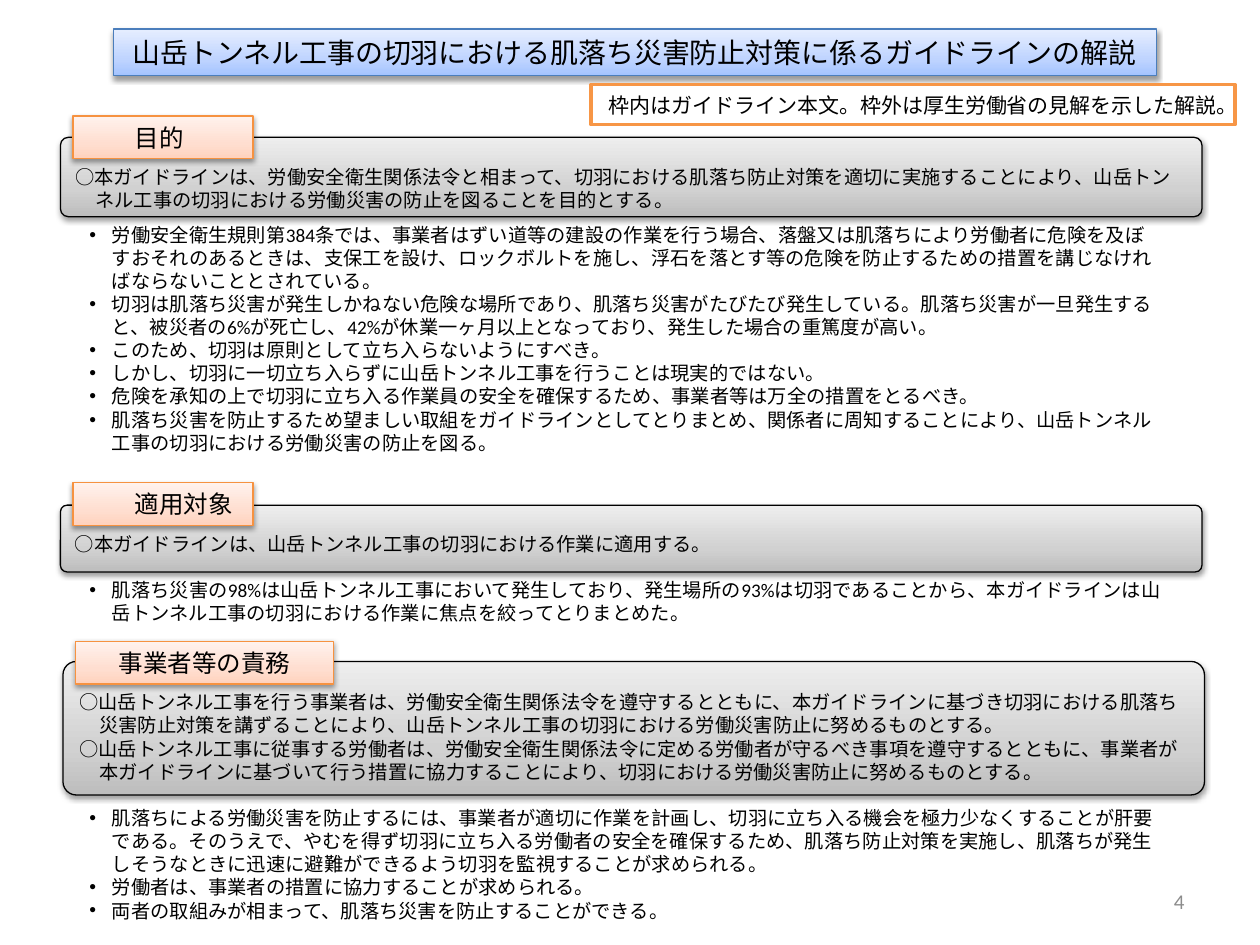
from dataclasses import dataclass
from typing import Optional

from lxml.etree import SubElement
from pptx import Presentation
from pptx.dml.color import RGBColor
from pptx.enum.shapes import MSO_SHAPE
from pptx.enum.text import MSO_ANCHOR, PP_ALIGN
from pptx.oxml.ns import qn
from pptx.util import Inches, Pt

COLORS = {
    "text": "000000",
    "number": "8C8C8C",
    "white": "FFFFFF",
    "orange": "F79646",
    "orange_edge": "F69240",
    "blue_edge": "4B7EBC",
}
GRADIENTS = {
    "gray": ("BDBDBD", "D1D1D1", "EEEEEE"),
    "peach": ("FFD2BD", "FFDED0", "FFF2ED"),
    "blue": ("A4C4FF", "BFD4FF", "E6EEFF"),
}
STOP_POSITIONS = (0, 35, 100)


@dataclass(frozen=True)
class Box:
    left: float
    top: float
    width: float
    height: float

    def lengths(self):
        return [Inches(value) for value in (self.left, self.top, self.width, self.height)]


@dataclass(frozen=True)
class Section:
    heading: str
    heading_box: Box
    rule_box: Box
    rules: tuple[str, ...]
    bullet_box: Box
    bullets: tuple[str, ...]
    centered: bool = False


SECTIONS = (
    Section(
        "目的",
        Box(0.58, 0.92, 1.43, 0.34),
        Box(0.48, 1.09, 9.06, 0.63),
        ("○本ガイドラインは、労働安全衛生関係法令と相まって、切羽における肌落ち防止対策を適切に実施することにより、山岳トンネル工事の切羽における労働災害の防止を図ることを目的とする。",),
        Box(0.59, 1.72, 8.75, 1.95),
        (
            "労働安全衛生規則第384条では、事業者はずい道等の建設の作業を行う場合、落盤又は肌落ちにより労働者に危険を及ぼすおそれのあるときは、支保工を設け、ロックボルトを施し、浮石を落とす等の危険を防止するための措置を講じなければならないこととされている。",
            "切羽は肌落ち災害が発生しかねない危険な場所であり、肌落ち災害がたびたび発生している。肌落ち災害が一旦発生すると、被災者の6%が死亡し、42%が休業一ヶ月以上となっており、発生した場合の重篤度が高い。",
            "このため、切羽は原則として立ち入らないようにすべき。",
            "しかし、切羽に一切立ち入らずに山岳トンネル工事を行うことは現実的ではない。",
            "危険を承知の上で切羽に立ち入る作業員の安全を確保するため、事業者等は万全の措置をとるべき。",
            "肌落ち災害を防止するため望ましい取組をガイドラインとしてとりまとめ、関係者に周知することにより、山岳トンネル工事の切羽における労働災害の防止を図る。",
        ),
    ),
    Section(
        "適用対象",
        Box(0.58, 3.83, 1.43, 0.34),
        Box(0.48, 4.01, 9.06, 0.53),
        ("○本ガイドラインは、山岳トンネル工事の切羽における作業に適用する。",),
        Box(0.59, 4.54, 8.75, 0.66),
        ("肌落ち災害の98%は山岳トンネル工事において発生しており、発生場所の93%は切羽であることから、本ガイドラインは山岳トンネル工事の切羽における作業に焦点を絞ってとりまとめた。",),
    ),
    Section(
        "事業者等の責務",
        Box(0.6, 5.09, 2.05, 0.34),
        Box(0.5, 5.25, 9.06, 1.06),
        (
            "○山岳トンネル工事を行う事業者は、労働安全衛生関係法令を遵守するとともに、本ガイドラインに基づき切羽における肌落ち災害防止対策を講ずることにより、山岳トンネル工事の切羽における労働災害防止に努めるものとする。",
            "○山岳トンネル工事に従事する労働者は、労働安全衛生関係法令に定める労働者が守るべき事項を遵守するとともに、事業者が本ガイドラインに基づいて行う措置に協力することにより、切羽における労働災害防止に努めるものとする。",
        ),
        Box(0.59, 6.35, 8.75, 1.21),
        (
            "肌落ちによる労働災害を防止するには、事業者が適切に作業を計画し、切羽に立ち入る機会を極力少なくすることが肝要である。そのうえで、やむを得ず切羽に立ち入る労働者の安全を確保するため、肌落ち防止対策を実施し、肌落ちが発生しそうなときに迅速に避難ができるよう切羽を監視することが求められる。",
            "労働者は、事業者の措置に協力することが求められる。",
            "両者の取組みが相まって、肌落ち災害を防止することができる。",
        ),
        centered=True,
    ),
)


def write_text(shape, *lines: str, size: float = 11, color: str = "text",
               align=PP_ALIGN.LEFT, anchor=MSO_ANCHOR.TOP, inset_left: float = 0.1,
               inset_top: float = 0.05, margin: float = 0, indent: float = 0,
               bullet: Optional[str] = None) -> None:
    frame = shape.text_frame
    frame.word_wrap = True
    frame.vertical_anchor = anchor
    frame.margin_left, frame.margin_top = Inches(inset_left), Inches(inset_top)
    frame.text = "\n".join(lines)
    for paragraph in frame.paragraphs:
        paragraph.alignment = align
        properties = paragraph._p.get_or_add_pPr()
        properties.set("marL", str(Inches(margin)))
        properties.set("indent", str(Inches(indent)))
        if bullet:
            SubElement(properties, qn("a:buFont"), typeface="Arial")
            SubElement(properties, qn("a:buChar"), char=bullet)
        for run in paragraph.runs:
            run.font.name = "Calibri"
            run.font.size = Pt(size)
            run.font.color.rgb = RGBColor.from_string(COLORS[color])


def add_panel(slide, box: Box, line: str, gradient: Optional[str] = None,
              kind=MSO_SHAPE.RECTANGLE, line_width: float = 0.75):
    shape = slide.shapes.add_shape(kind, *box.lengths())
    shape.line.color.rgb = RGBColor.from_string(COLORS[line])
    shape.line.width = Pt(line_width)
    shape.shadow.inherit = False
    if gradient:
        apply_gradient(shape, GRADIENTS[gradient])
        apply_shadow(shape)
    else:
        shape.fill.solid()
        shape.fill.fore_color.rgb = RGBColor.from_string(COLORS["white"])
    return shape


def apply_gradient(shape, colors: tuple[str, ...]) -> None:
    shape.fill.gradient()
    gradient = shape._element.spPr.find(qn("a:gradFill"))
    for child in list(gradient):
        gradient.remove(child)
    stops = SubElement(gradient, qn("a:gsLst"))
    for position, color in zip(STOP_POSITIONS, colors):
        stop = SubElement(stops, qn("a:gs"), pos=str(position * 1000))
        SubElement(stop, qn("a:srgbClr"), val=color)
    SubElement(gradient, qn("a:lin"), ang=str(270 * 60000), scaled="0")


def apply_shadow(shape) -> None:
    effects = shape._element.spPr.find(qn("a:effectLst"))
    shadow = SubElement(effects, qn("a:outerShdw"), blurRad=str(Pt(3.1)),
                        dist=str(Pt(1.6)), dir=str(90 * 60000), rotWithShape="0")
    color = SubElement(shadow, qn("a:srgbClr"), val=COLORS["text"])
    SubElement(color, qn("a:alpha"), val="38000")


def add_section(slide, section: Section) -> None:
    explanation = slide.shapes.add_textbox(*section.bullet_box.lengths())
    write_text(explanation, *section.bullets, margin=0.2, indent=-0.18, bullet="•")

    rule = add_panel(slide, section.rule_box, "text", "gray", MSO_SHAPE.ROUNDED_RECTANGLE)
    rule.adjustments[0] = 0.1
    write_text(rule, *section.rules, inset_top=0.2, margin=0.16, indent=-0.2)

    heading = add_panel(slide, section.heading_box, "orange_edge", "peach")
    write_text(heading, section.heading, size=14, anchor=MSO_ANCHOR.MIDDLE,
               align=PP_ALIGN.CENTER if section.centered else PP_ALIGN.LEFT,
               inset_left=0.1 if section.centered else 0.49)


def main() -> None:
    presentation = Presentation()
    presentation.slide_width, presentation.slide_height = Inches(10), Inches(7.5)
    slide = presentation.slides.add_slide(presentation.slide_layouts[6])

    title = add_panel(slide, Box(0.9, 0.23, 8.28, 0.37), "blue_edge", "blue")
    write_text(title, "山岳トンネル工事の切羽における肌落ち災害防止対策に係るガイドラインの解説",
               size=16, align=PP_ALIGN.CENTER)

    for section in SECTIONS:
        add_section(slide, section)

    legend = add_panel(slide, Box(4.69, 0.67, 5.11, 0.32), "orange", line_width=2)
    write_text(legend, "枠内はガイドライン本文。枠外は厚生労働省の見解を示した解説。",
               size=12, align=PP_ALIGN.CENTER, anchor=MSO_ANCHOR.MIDDLE)

    page_number = slide.shapes.add_textbox(*Box(7.17, 6.95, 2.33, 0.4).lengths())
    write_text(page_number, "4", size=12, color="number",
               align=PP_ALIGN.RIGHT, anchor=MSO_ANCHOR.MIDDLE)

    presentation.save("out.pptx")


if __name__ == "__main__":
    main()
